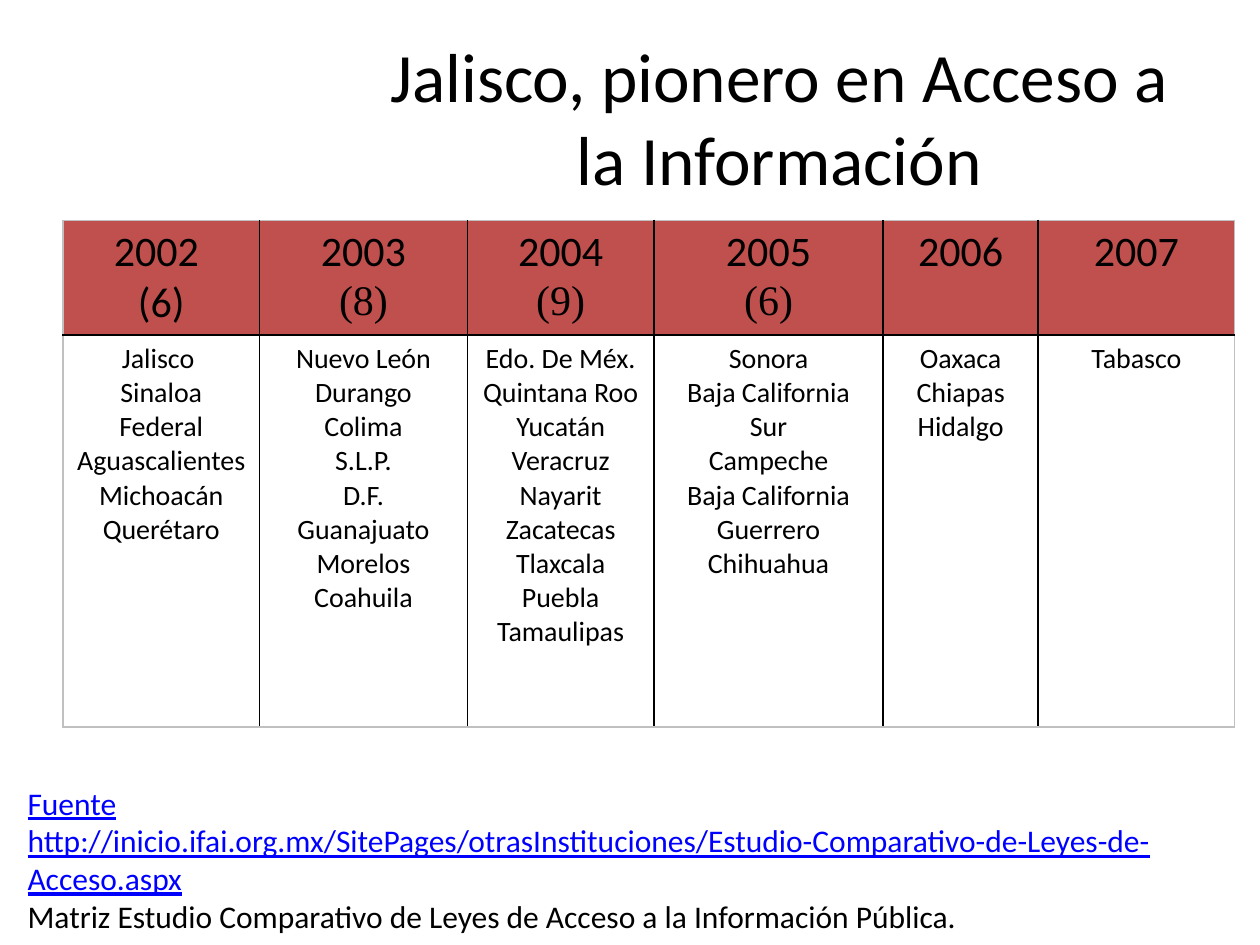
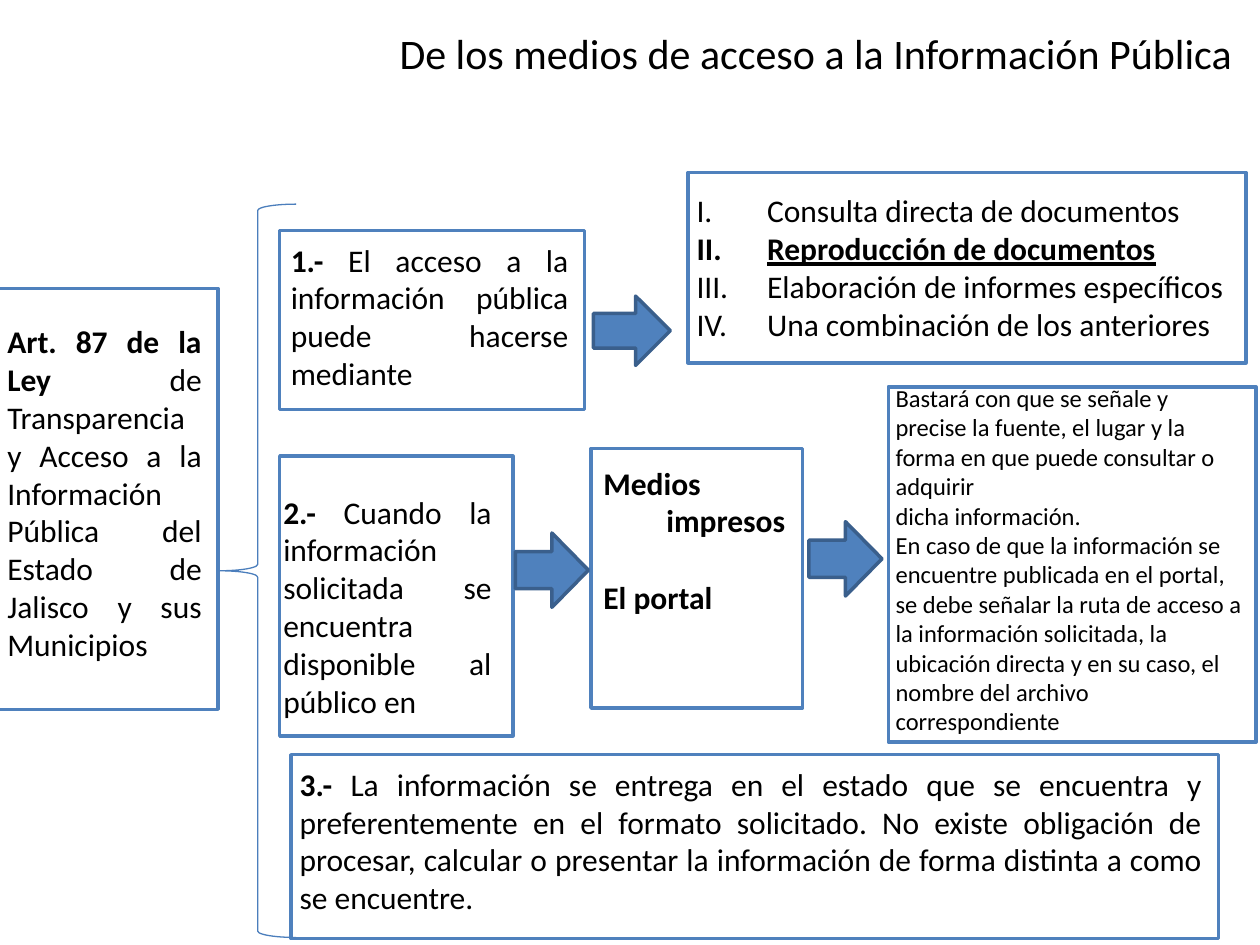
import pptx
import pptx.util
import pptx.dml.color
import pptx.enum.shapes
import pptx.enum.text
import pptx.oxml.ns
from lxml import etree
from dataclasses import dataclass

Inches = pptx.util.Inches
Pt = pptx.util.Pt
SHAPES = pptx.enum.shapes.MSO_SHAPE
ALIGN = pptx.enum.text.PP_ALIGN
ANCHOR = pptx.enum.text.MSO_ANCHOR
qn = pptx.oxml.ns.qn


@dataclass(frozen=True)
class Theme:
    font: str = "Calibri"
    serif: str = "Times New Roman"
    ink: str = "000000"
    paper: str = "FFFFFF"
    link: str = "0000FF"
    header: str = "C0504D"
    frame: str = "C0C0C0"
    accent: str = "4F81BD"
    arrow_line: str = "3A5F8C"
    brace_line: str = "4B7EBC"
    title: float = 39.6
    heading: float = 24
    body: float = 18
    cell: float = 16
    small: float = 14


THEME = Theme()

LAWS_TITLE = "Jalisco, pionero en Acceso a la Información"
LAWS_BY_YEAR = [
    ("2002 ", "(6)", THEME.font, 1.56,
     ["Jalisco ", "Sinaloa", "Federal", "Aguascalientes", "Michoacán", "Querétaro"]),
    ("2003", "(8)", THEME.serif, 1.65,
     ["Nuevo León", "Durango", "Colima", "S.L.P.", "D.F.", "Guanajuato", "Morelos", "Coahuila"]),
    ("2004", "(9)", THEME.serif, 1.48,
     ["Edo. De Méx.", "Quintana Roo", "Yucatán", "Veracruz", "Nayarit", "Zacatecas",
      "Tlaxcala", "Puebla", "Tamaulipas"]),
    ("2005", "(6)", THEME.serif, 1.82,
     ["Sonora", "Baja California", "Sur", "Campeche", "Baja California", "Guerrero", "Chihuahua"]),
    ("2006", None, THEME.font, 1.23, ["Oaxaca", "Chiapas", "Hidalgo"]),
    ("2007", None, THEME.font, 1.56, ["Tabasco"]),
]
ROW_HEIGHTS = (0.91, 3.11)
SOURCE_LINKS = [
    "Fuente",
    "http://inicio.ifai.org.mx/SitePages/otrasInstituciones/"
    "Estudio-Comparativo-de-Leyes-de-Acceso.aspx",
]
SOURCE_NOTE = "Matriz Estudio Comparativo de Leyes de Acceso a la Información Pública."

MEANS_TITLE = "De los medios de acceso a la Información Pública"
JUSTIFIED_CARDS = [
    ((-0.01, 2.29, 1.74, 3.34), (-0.04, 2.51, 1.74, 2.83), "Art. 87 de la Ley",
     " de Transparencia y Acceso a la Información Pública del Estado de Jalisco y sus Municipios"),
    ((2.22, 1.83, 2.42, 1.42), (2.21, 1.86, 2.4, 1.31), "1.- ",
     "El acceso a la información pública puede hacerse mediante"),
    ((2.22, 3.62, 1.85, 2.22), (2.15, 3.86, 1.85, 1.92), "2.- ",
     "Cuando la información solicitada se encuentra disponible al público en"),
    ((2.31, 5.99, 7.36, 1.46), (2.28, 6.02, 7.36, 1.31), "3.- ",
     "La información se entrega en el estado que se encuentra y preferentemente en el formato "
     "solicitado. No existe obligación de procesar, calcular o presentar la información de forma "
     "distinta a como se encuentre."),
]
ACCESS_FORMS = [
    "Consulta directa de documentos",
    "Reproducción de documentos",
    "Elaboración de informes específicos",
    "Una combinación de los anteriores",
]
HIGHLIGHTED_FORM = ACCESS_FORMS[1]
MEDIA = ["Medios impresos", "El portal"]
GUIDANCE = [
    "Bastará con que se señale y precise la fuente, el lugar y la forma en que puede "
    "consultar o adquirir",
    "dicha información.",
    "En caso de que la información se encuentre publicada en el portal, se debe señalar la ruta "
    "de acceso a la información solicitada, la ubicación directa y en su caso, el nombre del "
    "archivo correspondiente",
]
ARROWS = [(4.71, 2.35, 0.61, 0.55), (4.09, 4.23, 0.58, 0.59), (6.42, 4.14, 0.58, 0.59)]
BRACE = (1.74, 1.62, 0.61, 5.82)


def rgb(color):
    return pptx.dml.color.RGBColor.from_string(color)


def write(frame, lines, size, align=ALIGN.LEFT, hang=0, numbering=None):
    paragraphs = []
    for index, line in enumerate(lines):
        paragraph = frame.paragraphs[0] if index == 0 else frame.add_paragraph()
        paragraph.alignment = align
        properties = paragraph._p.get_or_add_pPr()
        if hang:
            properties.set("marL", str(Inches(hang)))
            properties.set("indent", str(-Inches(hang)))
        if numbering:
            etree.SubElement(properties, qn("a:buAutoNum"), type=numbering)
        paragraph.font.name = THEME.font
        paragraph.font.size = Pt(size)
        paragraph.font.color.rgb = rgb(THEME.ink)
        paragraph.add_run().text = line
        paragraphs.append(paragraph)
    return paragraphs


def add_text(slide, box, lines, size, anchor=ANCHOR.TOP, **layout):
    frame = slide.shapes.add_textbox(*map(Inches, box)).text_frame
    frame.word_wrap = True
    frame.vertical_anchor = anchor
    return write(frame, lines, size, **layout)


def add_title(slide, box, text, size):
    add_text(slide, box, [text], size, ANCHOR.MIDDLE, align=ALIGN.CENTER)


def add_figure(slide, kind, box, fill, line, width=2):
    shape = slide.shapes.add_shape(kind, *map(Inches, box))
    shape.shadow.inherit = False
    if fill:
        shape.fill.solid()
        shape.fill.fore_color.rgb = rgb(fill)
    else:
        shape.fill.background()
    shape.line.color.rgb = rgb(line)
    shape.line.width = Pt(width)


def add_card(slide, panel, text_box, lines, size, **layout):
    add_figure(slide, SHAPES.RECTANGLE, panel, THEME.paper, THEME.accent)
    return add_text(slide, text_box, lines, size, **layout)


def set_borders(cell, colors):
    properties = cell._tc.get_or_add_tcPr()
    for position, (side, color) in enumerate(colors.items()):
        line = etree.Element(qn("a:" + side), w=str(Pt(1)))
        fill = etree.SubElement(line, qn("a:solidFill"))
        etree.SubElement(fill, qn("a:srgbClr"), val=color)
        properties.insert(position, line)


def add_laws_table(slide):
    columns = len(LAWS_BY_YEAR)
    width = sum(column[3] for column in LAWS_BY_YEAR)
    table = slide.shapes.add_table(
        2, columns, Inches(0.5), Inches(1.75), Inches(width), Inches(sum(ROW_HEIGHTS))).table
    for row, height in zip(table.rows, ROW_HEIGHTS):
        row.height = Inches(height)
    for index, (year, count, count_font, column_width, states) in enumerate(LAWS_BY_YEAR):
        table.columns[index].width = Inches(column_width)
        heading = [year, count] if count else [year]
        contents = [(heading, THEME.heading, THEME.header), (states, THEME.cell, THEME.paper)]
        for row, (lines, size, fill) in enumerate(contents):
            cell = table.cell(row, index)
            cell.fill.solid()
            cell.fill.fore_color.rgb = rgb(fill)
            paragraphs = write(cell.text_frame, lines, size, ALIGN.CENTER, hang=0.38)
            if row == 0 and count:
                paragraphs[1].font.name = count_font
            set_borders(cell, {
                "lnL": THEME.frame if index == 0 else THEME.ink,
                "lnR": THEME.frame if index == columns - 1 else THEME.ink,
                "lnT": THEME.frame if row == 0 else THEME.ink,
                "lnB": THEME.frame if row == 1 else THEME.ink,
            })


def build_laws_slide(slide):
    add_title(slide, (2.87, 0.3, 6.63, 1.25), LAWS_TITLE, THEME.title)
    add_laws_table(slide)
    source = add_text(slide, (0.12, 6.17, 9.69, 1.31), SOURCE_LINKS + [SOURCE_NOTE], THEME.body)
    for paragraph in source[:len(SOURCE_LINKS)]:
        paragraph.font.color.rgb = rgb(THEME.link)
        paragraph.font.underline = True


def build_means_slide(slide):
    add_title(slide, (2.95, 0.01, 7.05, 0.82), MEANS_TITLE, THEME.heading)
    for panel, text_box, lead, rest in JUSTIFIED_CARDS:
        paragraph, = add_card(slide, panel, text_box, [lead], THEME.body, align=ALIGN.JUSTIFY)
        paragraph.runs[0].font.bold = True
        paragraph.add_run().text = rest

    forms = add_card(slide, (5.46, 1.37, 4.43, 1.51), (5.43, 1.47, 4.43, 1.31), ACCESS_FORMS,
                     THEME.body, hang=0.56, numbering="romanUcPeriod")
    highlighted = forms[ACCESS_FORMS.index(HIGHLIGHTED_FORM)].runs[0].font
    highlighted.bold = True
    highlighted.underline = True

    media = add_card(slide, (4.69, 3.56, 1.68, 2.06), (4.69, 3.63, 1.72, 1.62), MEDIA,
                     THEME.body, hang=0.5)
    for paragraph in media:
        paragraph.font.bold = True
    media[1].space_before = Pt(22)

    add_card(slide, (7.05, 3.07, 2.92, 2.82), (7.01, 2.99, 2.97, 3.16), GUIDANCE, THEME.small)
    for box in ARROWS:
        add_figure(slide, SHAPES.RIGHT_ARROW, box, THEME.accent, THEME.arrow_line)
    add_figure(slide, SHAPES.LEFT_BRACE, BRACE, None, THEME.brace_line, 0.75)


def main():
    presentation = pptx.Presentation()
    presentation.slide_width = Inches(10)
    presentation.slide_height = Inches(7.5)
    blank = presentation.slide_layouts[6]
    for build in (build_laws_slide, build_means_slide):
        build(presentation.slides.add_slide(blank))
    presentation.save("out.pptx")


if __name__ == "__main__":
    main()
